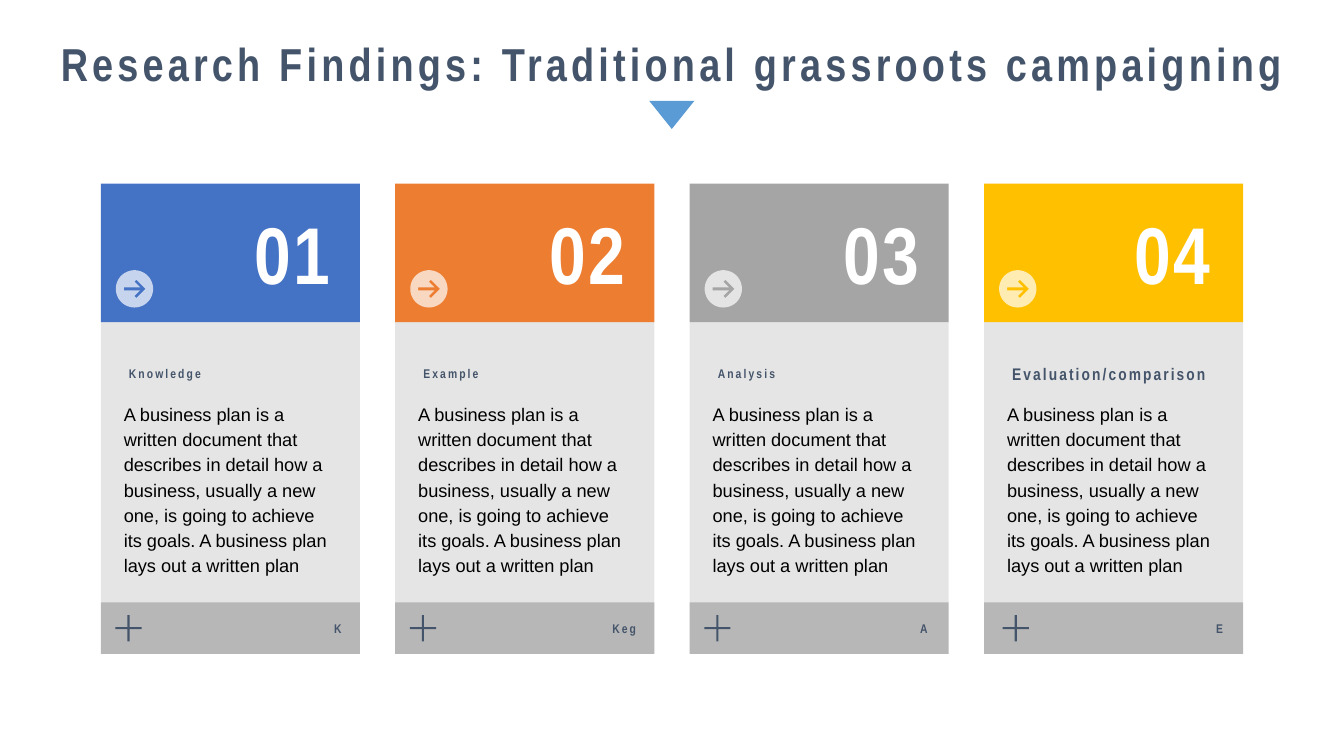
from math import cos, pi, sin

from pptx import Presentation
from pptx.dml.color import RGBColor
from pptx.enum.shapes import MSO_SHAPE as Preset
from pptx.enum.text import MSO_ANCHOR as Anchor, MSO_AUTO_SIZE as AutoSize, PP_ALIGN as Align
from pptx.oxml.ns import qn
from pptx.util import Cm, Pt
from lxml.etree import SubElement

INK = "44546A"
WHITE = "FFFFFF"
BLACK = "000000"
SUMMARY = (
    "A business plan is a written document that describes in detail how a business, "
    "usually a new one, is going to achieve its goals. A business plan lays out a written plan"
)
CARD_LEFT, CARD_PITCH, CARD_WIDTH = 2.54, 7.42, 6.53
TILE_TOP, BODY_TOP, FOOTER_TOP, CARD_BOTTOM = 4.63, 8.12, 15.18, 16.48
HEADING_MIDDLE = 9.41
ARROW_HALF = [(-0.27, -0.04), (0.14, -0.04), (0, -0.18), (0.05, -0.23), (0.28, 0)]

CARDS = [
    dict(color="4472C4", heading="Knowledge", heading_width=2.49,
         tag="K", tag_right=6.32, tag_width=0.74),
    dict(color="ED7D31", heading="Example", heading_width=2.03,
         tag="Keg", tag_right=6.32, tag_width=1.17),
    dict(color="A5A5A5", heading="Analysis", heading_width=2.03,
         tag="A", tag_right=6.25, tag_width=0.76),
    dict(color="FFC000", heading="Evaluation/comparison", heading_width=5.77,
         heading_size=12, heading_height=0.76, tag="E", tag_right=6.27, tag_width=0.71,
         plus_offset=0.47, number_offset=3.25),
]


def paint(shape, color, opacity=100):
    """Give a shape a flat fill with no line or shadow."""
    shape.shadow.inherit = False
    shape.line.fill.background()
    shape.fill.solid()
    shape.fill.fore_color.rgb = RGBColor.from_string(color)
    if opacity < 100:
        tint = shape.fill._xPr.find(".//" + qn("a:srgbClr"))
        SubElement(tint, qn("a:alpha")).set("val", str(opacity * 1000))


def write(box, text, size, color=INK, font="Arial Narrow", bold=True, spacing=1.5,
          align=Align.LEFT, anchor=Anchor.MIDDLE, wrap=False):
    """Fill a box with one formatted paragraph and return the paragraph."""
    frame = box.text_frame
    frame.word_wrap = wrap
    frame.auto_size = AutoSize.SHAPE_TO_FIT_TEXT
    frame.vertical_anchor = anchor
    para = frame.paragraphs[0]
    para.alignment = align
    span = para.add_run()
    span.text = text
    span.font.name = font
    span.font.size = Pt(size)
    span.font.bold = bold
    span.font.color.rgb = RGBColor.from_string(color)
    span._r.get_or_add_rPr().set("spc", str(int(spacing * 100)))
    return para


class Page:
    """The current slide with one method for each kind of element."""

    def __init__(self, deck):
        """Add a title-only slide to the deck."""
        self.slide = deck.slides.add_slide(deck.slide_layouts[5])
        self.shapes = self.slide.shapes

    def title(self, text):
        """Place the heading and the pointer below it."""
        box = self.shapes.title
        box.left, box.top, box.width, box.height = Cm(0.71), Cm(0.76), Cm(32.46), Cm(1.68)
        write(box, text, 33, spacing=3, align=Align.CENTER, anchor=Anchor.TOP)
        pointer = self.block(16.36, 2.54, 1.14, 0.71, "5B9BD5", preset=Preset.ISOSCELES_TRIANGLE)
        pointer.rotation = 180

    def block(self, left, top, width, height, color, opacity=100, preset=Preset.RECTANGLE):
        """Add a filled preset shape."""
        shape = self.shapes.add_shape(preset, Cm(left), Cm(top), Cm(width), Cm(height))
        paint(shape, color, opacity)
        return shape

    def label(self, left, top, width, height, text, size, **style):
        """Add a text box holding one line."""
        box = self.shapes.add_textbox(Cm(left), Cm(top), Cm(width), Cm(height))
        write(box, text, size, **style)

    def summary(self, left, top, width, height, text):
        """Add a wrapped block of running text."""
        box = self.shapes.add_textbox(Cm(left), Cm(top), Cm(width), Cm(height))
        para = write(box, text, 13, color=BLACK, font="Arial", bold=False, spacing=0,
                     anchor=Anchor.TOP, wrap=True)
        para.line_spacing = Pt(18)
        para.space_before = Pt(2.6)
        frame = box.text_frame
        frame.margin_left = frame.margin_right = Cm(0.3)
        frame.margin_top = frame.margin_bottom = Cm(0.15)

    def badge(self, middle_x, middle_y, radius):
        """Add a translucent disc with an arrow cut out of it."""
        disc = [(radius * cos(step * pi / 36), radius * sin(step * pi / 36)) for step in range(72)]
        arrow = ARROW_HALF + [(x, -y) for x, y in ARROW_HALF[-2::-1]]
        outlines = [[(Cm(middle_x + x), Cm(middle_y + y)) for x, y in points]
                    for points in (disc, arrow)]
        builder = self.shapes.build_freeform(*outlines[0][0])
        builder.add_line_segments(outlines[0][1:], close=True)
        builder.move_to(*outlines[1][0])
        builder.add_line_segments(outlines[1][1:], close=True)
        paint(builder.convert_to_shape(), WHITE, 70)

    def card(self, left, number, color, heading, heading_width, tag, tag_right, tag_width,
             heading_size=9, heading_height=0.64, plus_offset=0.37, number_offset=3.35):
        """Add one numbered card with its tile, text and footer."""
        self.block(left, BODY_TOP, CARD_WIDTH, CARD_BOTTOM - BODY_TOP, BLACK, 10)
        self.block(left, TILE_TOP, CARD_WIDTH, BODY_TOP - TILE_TOP, color)
        self.badge(left + 0.85, 7.28, 0.47)
        self.block(left, FOOTER_TOP, CARD_WIDTH, CARD_BOTTOM - FOOTER_TOP, BLACK, 20)
        plus = self.block(left + plus_offset, 15.5, 0.66, 0.66, INK, preset=Preset.CROSS)
        plus.adjustments[0] = 0.46
        self.label(left + number_offset, 5, 2.69, 2.72, f"{number:02}", 57.5,
                   color=WHITE, align=Align.RIGHT)
        self.label(left + tag_right - tag_width, 15.52, tag_width, 0.64, tag, 9,
                   align=Align.RIGHT)
        self.summary(left + 0.28, 9.93, 5.97, 4.75, SUMMARY)
        self.label(left + 0.46, HEADING_MIDDLE - heading_height / 2, heading_width,
                   heading_height, heading, heading_size)


def main():
    """Build the slide and save it."""
    deck = Presentation()
    deck.slide_width, deck.slide_height = Cm(33.87), Cm(19.05)
    page = Page(deck)
    page.title("Research Findings: Traditional grassroots campaigning")
    for index, card in enumerate(CARDS):
        page.card(CARD_LEFT + index * CARD_PITCH, index + 1, **card)
    deck.save("out.pptx")


if __name__ == "__main__":
    main()
